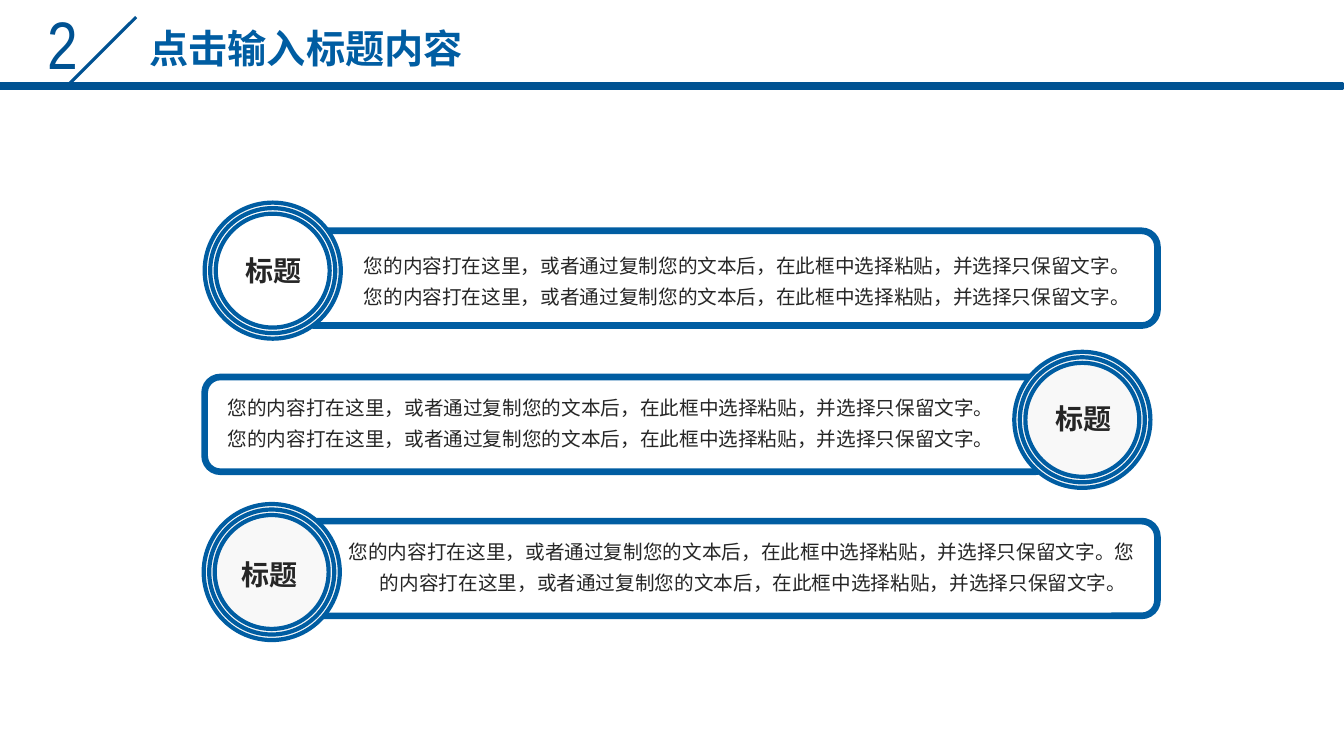
from dataclasses import dataclass

from lxml import etree
from pptx import Presentation
from pptx.dml.color import RGBColor
from pptx.enum.shapes import MSO_CONNECTOR, MSO_SHAPE
from pptx.enum.text import PP_ALIGN
from pptx.oxml.ns import qn
from pptx.util import Emu, Pt

RECT, ROUNDED, OVAL = MSO_SHAPE.RECTANGLE, MSO_SHAPE.ROUNDED_RECTANGLE, MSO_SHAPE.OVAL
STRAIGHT = MSO_CONNECTOR.STRAIGHT
LEFT, CENTER = PP_ALIGN.LEFT, PP_ALIGN.CENTER

# Content: lengths in px, 100 px to the inch
SECTION_NUMBER = "2"
HEADING = "点击输入标题内容"
LABEL = "标题"
SENTENCE = "您的内容打在这里，或者通过复制您的文本后，在此框中选择粘贴，并选择只保留文字。"
BODY = SENTENCE * 2
ROWS = [
    dict(panel=(296, 229, 852, 94), badge=(203, 201), middle_fill="FFFFFF",
         label=(205, 247, 133, 44), label_align=CENTER,
         body=(351, 240, 781, 71), hanging=0),
    dict(panel=(203, 374, 840, 94), badge=(1006, 349), middle_fill=None,
         label=(1037, 393, 109, 44), label_align=LEFT,
         body=(216, 381, 784, 98), hanging=0),
    dict(panel=(296, 517, 852, 94), badge=(202, 500), middle_fill=None,
         label=(230, 548, 125, 44), label_align=LEFT,
         body=(336, 524, 811, 71), hanging=31),
]
BADGE_SIZE = 135
RING_STEP = 11  # each ring is this much narrower than the one around it


@dataclass(frozen=True)
class Theme:
    blue: str = "005DA2"
    dark_blue: str = "005292"
    ink: str = "262626"
    badge_fill: str = "F8F8F8"
    cjk: str = "Noto Sans CJK SC"
    narrow: str = "Arial Narrow"
    number_size: int = 48
    heading_size: int = 28
    label_size: int = 20
    body_size: int = 14
    panel_line: float = 4.75
    ring_line: float = 3
    slant_line: float = 2.25
    rule_line: float = 2


THEME = Theme()


def px(length):
    return Emu(round(length * 9144))


prs = Presentation()
prs.slide_width, prs.slide_height = px(1333), px(750)
slide = prs.slides.add_slide(prs.slide_layouts[6])


def add_outline(kind, box, color, width, fill=None):
    shape = slide.shapes.add_shape(kind, *map(px, box))
    shape.shadow.inherit = False
    shape.line.color.rgb = RGBColor.from_string(color)
    shape.line.width = Pt(width)
    if fill:
        shape.fill.solid()
        shape.fill.fore_color.rgb = RGBColor.from_string(fill)
    else:
        shape.fill.background()


def add_text(box, text, size, color, font=THEME.cjk, bold=False,
             align=LEFT, spacing=1.0, hanging=0):
    frame = slide.shapes.add_textbox(*map(px, box)).text_frame
    frame.word_wrap = True
    paragraph = frame.paragraphs[0]
    paragraph.alignment = align
    paragraph.line_spacing = spacing
    if hanging:
        properties = paragraph._p.get_or_add_pPr()
        properties.set("marL", str(px(hanging)))
        properties.set("indent", str(-px(hanging)))
    run = paragraph.add_run()
    run.text = text
    run.font.size = Pt(size)
    run.font.bold = bold
    run.font.color.rgb = RGBColor.from_string(color)
    run.font.name = font
    etree.SubElement(run._r.get_or_add_rPr(), qn("a:ea")).set("typeface", font)


# Header
add_text((37, -3, 60, 91), SECTION_NUMBER, THEME.number_size, THEME.dark_blue, THEME.narrow)
slant = slide.shapes.add_connector(STRAIGHT, px(135), px(17), px(68), px(84))
slant.line.color.rgb = RGBColor.from_string(THEME.dark_blue)
slant.line.width = Pt(THEME.slant_line)
etree.SubElement(slant._element.spPr, qn("a:effectLst"))
add_outline(RECT, (0, 83, 1332, 5), THEME.dark_blue, THEME.rule_line, THEME.dark_blue)
add_text((124, 19, 359, 57), HEADING, THEME.heading_size, THEME.blue, bold=True, align=CENTER)

# Rows: panel, ringed badge, label and body
for row in ROWS:
    add_outline(ROUNDED, row["panel"], THEME.blue, THEME.panel_line)
    left, top = row["badge"]
    for ring, fill in enumerate((THEME.badge_fill, row["middle_fill"], None)):
        inset = ring * RING_STEP / 2
        diameter = BADGE_SIZE - ring * RING_STEP
        add_outline(OVAL, (left + inset, top + inset, diameter, diameter),
                    THEME.blue, THEME.ring_line, fill)
    add_text(row["label"], LABEL, THEME.label_size, THEME.ink, bold=True,
             align=row["label_align"])
    add_text(row["body"], BODY, THEME.body_size, THEME.ink, spacing=1.3,
             hanging=row["hanging"])

prs.save("out.pptx")
